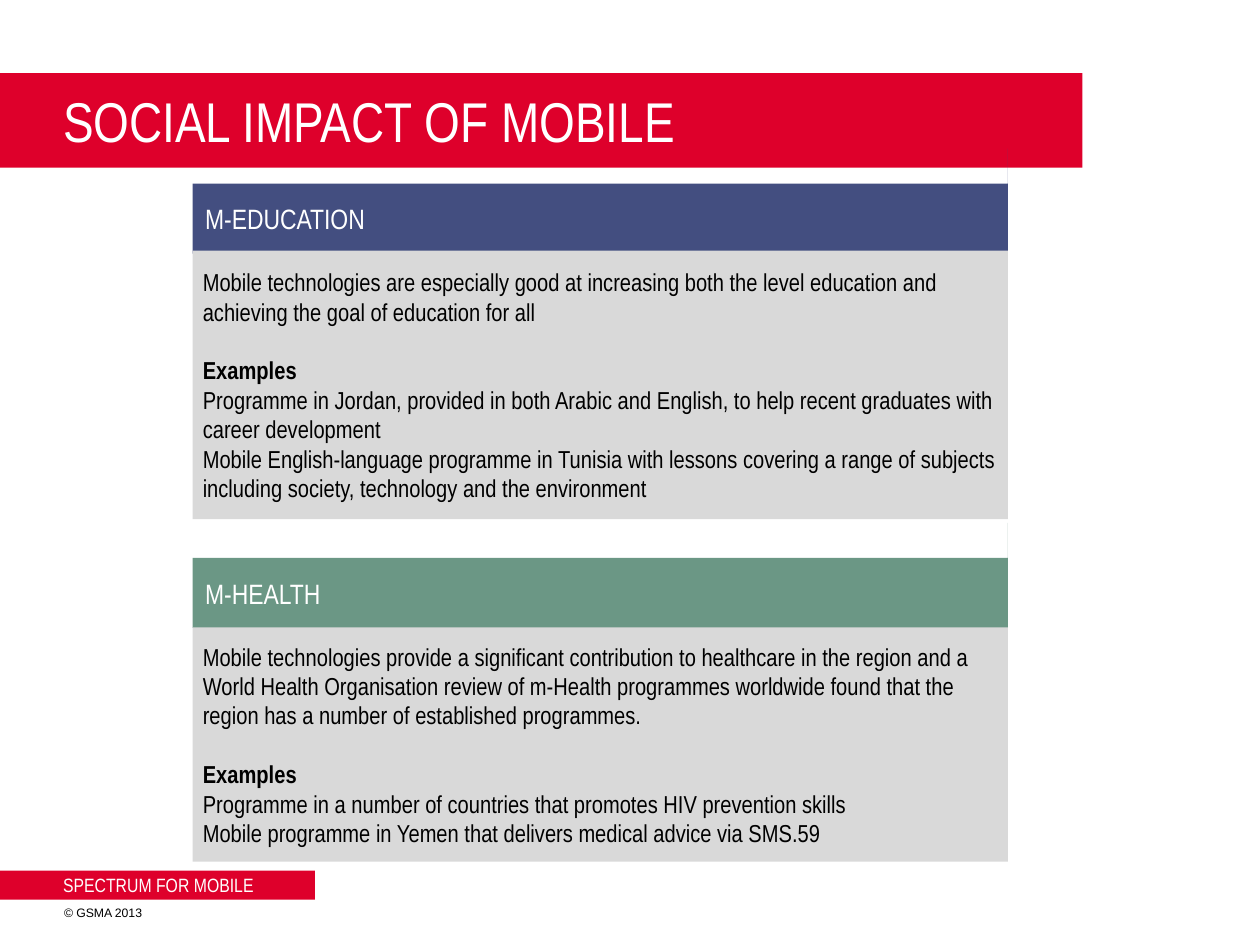
from dataclasses import dataclass
from typing import NamedTuple

from pptx import Presentation
from pptx.dml.color import RGBColor as Color
from pptx.enum.shapes import MSO_SHAPE as Preset
from pptx.enum.text import MSO_ANCHOR as Anchor, PP_ALIGN as Align
from pptx.util import Inches, Pt


@dataclass(frozen=True)
class Theme:
    red: str = "DE002B"
    blue: str = "434E80"
    green: str = "6B9785"
    grey: str = "D9D9D9"
    white: str = "FFFFFF"
    black: str = "000000"
    narrow: str = "Arial Narrow"
    regular: str = "Arial"
    title_size: int = 32
    heading_size: int = 16
    body_size: int = 14
    footer_size: int = 11
    copyright_size: int = 7
    examples_gap: float = 16.8


class Area(NamedTuple):
    left: float
    top: float
    width: float
    height: float

    def lengths(self) -> list:
        return [Inches(value) for value in self]


@dataclass(frozen=True)
class Topic:
    heading: str
    color: str
    heading_top: float
    body_top: float
    body_height: float
    summary: str
    examples: tuple


THEME = Theme()
TOPIC_LEFT, TOPIC_WIDTH, HEADING_HEIGHT = 1.53, 6.47, 1.11

BANDS = (Area(-0.03, 0.58, 8.62, 0.75), Area(-0.03, 6.91, 2.53, 0.23))

TOPICS = (
    Topic(
        "M-EDUCATION", THEME.blue, 1.18, 1.99, 2.13,
        "Mobile technologies are especially good at increasing both the level "
        "education and achieving the goal of education for all",
        (
            "Programme in Jordan, provided in both Arabic and English, to help "
            "recent graduates with career development",
            "Mobile English-language programme in Tunisia with lessons covering a "
            "range of subjects including society, technology and the environment",
        ),
    ),
    Topic(
        "M-HEALTH", THEME.green, 4.15, 4.98, 1.86,
        "Mobile technologies provide a significant contribution to healthcare in "
        "the region and a World Health Organisation review of m-Health programmes "
        "worldwide found that the region has a number of established programmes.",
        (
            "Programme in a number of countries that promotes HIV prevention skills",
            "Mobile programme in Yemen that delivers medical advice via SMS.59",
        ),
    ),
)


def write(para, text: str, *, size: float, color: str, font: str = THEME.narrow,
          bold: bool = False, before: float = 0) -> None:
    para.alignment = Align.LEFT
    if before:
        para.space_before = Pt(before)
    span = para.add_run()
    span.text = text
    span.font.name = font
    span.font.size = Pt(size)
    span.font.bold = bold
    span.font.color.rgb = Color.from_string(color)


def set_frame(box, *, wrap: bool, side: float, edge: float):
    frame = box.text_frame
    frame.word_wrap = wrap
    frame.vertical_anchor = Anchor.MIDDLE
    frame.margin_left = frame.margin_right = Inches(side)
    frame.margin_top = frame.margin_bottom = Inches(edge)
    return frame


def add_block(page, area: Area, color: str, preset=Preset.RECTANGLE):
    block = page.shapes.add_shape(preset, *area.lengths())
    block.shadow.inherit = False
    block.fill.solid()
    block.fill.fore_color.rgb = Color.from_string(color)
    block.line.fill.background()
    return block


def add_label(page, area: Area, text: str, *, side: float = 0, **style) -> None:
    box = page.shapes.add_textbox(*area.lengths())
    frame = set_frame(box, wrap=False, side=side, edge=0)
    write(frame.paragraphs[0], text, **style)


def add_topic(page, topic: Topic) -> None:
    heading_area = Area(TOPIC_LEFT, topic.heading_top, TOPIC_WIDTH, HEADING_HEIGHT)
    heading = add_block(page, heading_area, topic.color, Preset.RIGHT_ARROW)
    heading.adjustments[0] = 0.5
    heading.adjustments[1] = 0
    frame = set_frame(heading, wrap=True, side=0.1, edge=0.05)
    write(frame.paragraphs[0], topic.heading, size=THEME.heading_size, color=THEME.white)

    body_area = Area(TOPIC_LEFT, topic.body_top, TOPIC_WIDTH, topic.body_height)
    body = add_block(page, body_area, THEME.grey)
    frame = set_frame(body, wrap=True, side=0.08, edge=0.05)
    style = dict(size=THEME.body_size, color=THEME.black)
    write(frame.paragraphs[0], topic.summary, **style)
    write(frame.add_paragraph(), "Examples", bold=True, before=THEME.examples_gap, **style)
    for example in topic.examples:
        write(frame.add_paragraph(), example, **style)


def main() -> None:
    deck = Presentation()
    deck.slide_width, deck.slide_height = Inches(10), Inches(7.5)
    page = deck.slides.add_slide(deck.slide_layouts[6])

    for band in BANDS:
        add_block(page, band, THEME.red)
    add_label(page, Area(0.5, 6.91, 2.99, 0.22), "SPECTRUM FOR MOBILE",
              size=THEME.footer_size, color=THEME.white)
    add_label(page, Area(0.41, 7.16, 1.58, 0.17), "© GSMA 2013", side=0.1,
              size=THEME.copyright_size, color=THEME.black, font=THEME.regular)
    add_label(page, Area(0.5, 0.58, 8.09, 0.75), "SOCIAL IMPACT OF MOBILE",
              size=THEME.title_size, color=THEME.white)
    for topic in TOPICS:
        add_topic(page, topic)

    deck.save("out.pptx")


if __name__ == "__main__":
    main()
